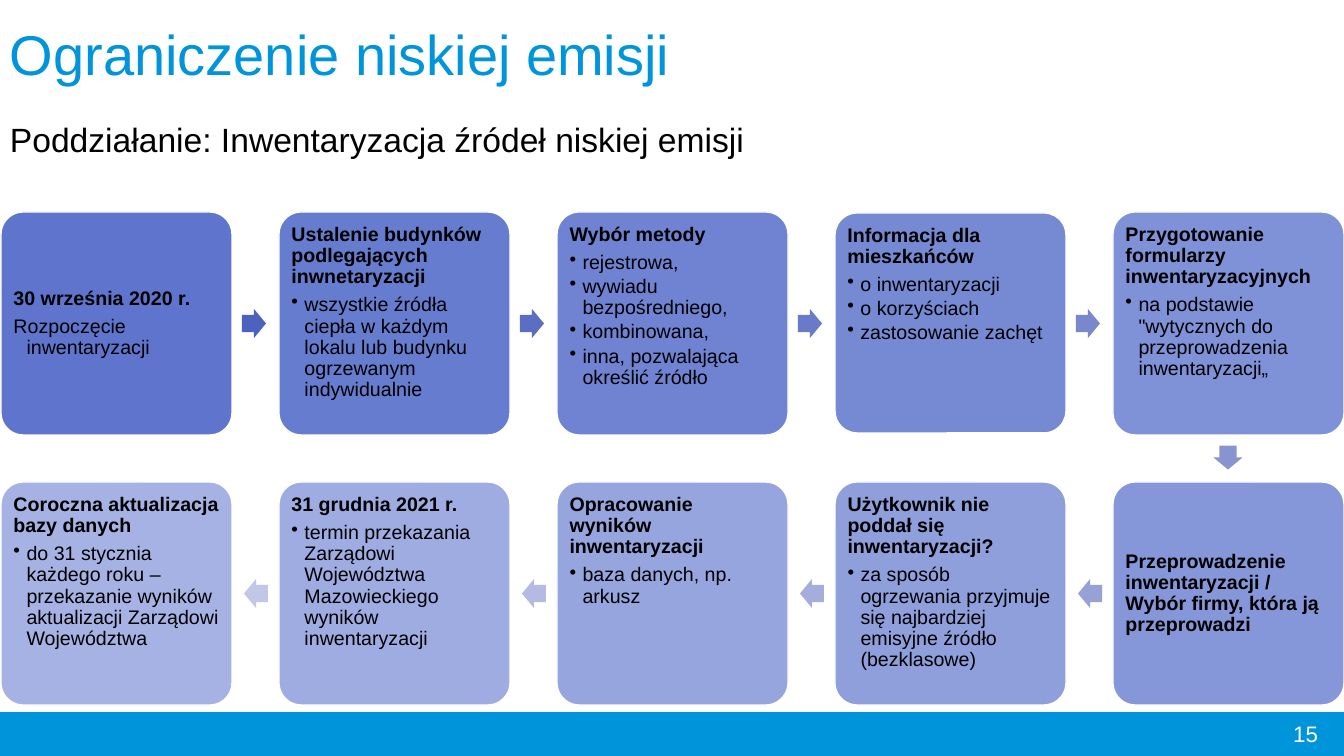
from lxml import etree
from pptx import Presentation, util as u
from pptx.dml.color import RGBColor
from pptx.enum import shapes, text
from pptx.oxml.ns import qn

PX = 914400 / 100.8
COLORS = {"brand": "0094DA", "step": "4E67C8", "white": "FFFFFF", "black": "000000"}
ARROW_COLORS = ["4B62BF", "5A6FC3", "697BC8", "7987CC", "8894D1",
                "96A1D6", "A5ADDB", "B4BAE1", "C2C7E6"]

# Each step: heading, detail lines
STEPS = [
    ("30 września 2020 r.", ["Rozpoczęcie inwentaryzacji"]),
    ("Ustalenie budynków podlegających inwnetaryzacji",
     ["wszystkie źródła ciepła w każdym lokalu lub budynku ogrzewanym indywidualnie"]),
    ("Wybór metody", ["rejestrowa,", "wywiadu bezpośredniego,", "kombinowana,",
                      "inna, pozwalająca określić źródło"]),
    ("Informacja dla mieszkańców",
     ["o inwentaryzacji", "o korzyściach", "zastosowanie zachęt"]),
    ("Przygotowanie formularzy inwentaryzacyjnych",
     ['na podstawie "wytycznych do przeprowadzenia inwentaryzacji„']),
    ("Przeprowadzenie inwentaryzacji /\nWybór firmy, która ją przeprowadzi", []),
    ("Użytkownik nie poddał się inwentaryzacji?",
     ["za sposób ogrzewania przyjmuje się najbardziej emisyjne źródło (bezklasowe)"]),
    ("Opracowanie wyników inwentaryzacji", ["baza danych, np. arkusz"]),
    ("31 grudnia 2021 r.",
     ["termin przekazania Zarządowi Województwa Mazowieckiego wyników inwentaryzacji"]),
    ("Coroczna aktualizacja bazy danych",
     ["do 31 stycznia każdego roku – przekazanie wyników aktualizacji Zarządowi Województwa"]),
]
CENTERED_STEPS = {0, 5}
SHORT_STEP = 3

COLUMNS = 5
LEFT, COLUMN_PITCH, BOX_WIDTH = 1, 278, 231
TOP, ROW_PITCH, BOX_HEIGHT = 212, 270, 223
ARROW_WIDTH, ARROW_HEIGHT = 24, 29


def px(length):
    return u.Emu(round(length * PX))


class SlideBuilder:
    font = "Arial"

    def __init__(self, presentation):
        self.slide = presentation.slides.add_slide(presentation.slide_layouts[6])

    def shape(self, kind, left, top, width, height, fill, line=None, opacity=100):
        shape = self.slide.shapes.add_shape(
            kind, px(left), px(top), px(width), px(height))
        shape.shadow.inherit = False
        shape.fill.solid()
        shape.fill.fore_color.rgb = RGBColor.from_string(fill)
        if opacity < 100:
            color = shape.fill._xPr.find(qn("a:solidFill"))[0]
            etree.SubElement(color, qn("a:alpha")).set("val", str(opacity * 1000))
        if line:
            shape.line.color.rgb = RGBColor.from_string(line)
            shape.line.width = u.Pt(1)
        else:
            shape.line.fill.background()
        return shape

    def frame(self, shape, inset, anchor):
        frame = shape.text_frame
        frame.word_wrap = True
        frame.vertical_anchor = anchor
        frame.margin_left = frame.margin_right = px(inset)
        frame.margin_top = frame.margin_bottom = px(inset)
        return frame

    def text_box(self, left, top, width, height, inset):
        box = self.slide.shapes.add_textbox(px(left), px(top), px(width), px(height))
        return self.frame(box, inset, text.MSO_ANCHOR.MIDDLE)

    def paragraph(self, frame, content, size, color, bold=False, indent=0,
                  bullet=False, before=0, after=0, spacing=0.9,
                  align=text.PP_ALIGN.LEFT):
        first = frame.paragraphs[0]
        paragraph = frame.add_paragraph() if first.runs else first
        properties = paragraph._p.get_or_add_pPr()
        if indent:
            properties.set("marL", str(px(indent)))
            properties.set("indent", str(-px(indent)))
        if bullet:
            etree.SubElement(properties, qn("a:buChar")).set("char", "•")
        paragraph.alignment = align
        paragraph.line_spacing = spacing
        paragraph.space_before = u.Pt(before)
        paragraph.space_after = u.Pt(after)
        for number, line in enumerate(content.split("\n")):
            if number:
                paragraph.add_line_break()
            run = paragraph.add_run()
            run.text = line
            run.font.name = self.font
            run.font.size = u.Pt(size)
            run.font.bold = bold
            run.font.color.rgb = RGBColor.from_string(color)

    def step(self, left, top, height, opacity, heading, details, centered):
        box = self.shape(shapes.MSO_SHAPE.ROUNDED_RECTANGLE, left, top, BOX_WIDTH,
                         height, COLORS["step"], COLORS["white"], opacity)
        box.adjustments[0] = 0.1
        anchor = text.MSO_ANCHOR.MIDDLE if centered else text.MSO_ANCHOR.TOP
        frame = self.frame(box, 6, anchor)
        self.paragraph(frame, heading, 14, COLORS["black"], bold=True, after=4.9)
        for detail in details:
            self.paragraph(frame, detail, 14, COLORS["black"], indent=13,
                           bullet=not centered, after=2.1)

    def arrow(self, left, top, color, rotation):
        arrow = self.shape(shapes.MSO_SHAPE.RIGHT_ARROW, left, top,
                           ARROW_WIDTH, ARROW_HEIGHT, color)
        arrow.adjustments[0] = 0.6
        arrow.adjustments[1] = 0.5
        arrow.rotation = rotation


def main():
    presentation = Presentation()
    presentation.slide_width = px(1344)
    presentation.slide_height = px(756)
    builder = SlideBuilder(presentation)

    # Footer bar and page number
    builder.shape(shapes.MSO_SHAPE.RECTANGLE, 0, 713, 1344, 43,
                  COLORS["brand"], COLORS["brand"])
    page_number = builder.text_box(1026, 713, 302, 41, 10)
    builder.paragraph(page_number, "15", 16, COLORS["white"], spacing=1.0,
                      align=text.PP_ALIGN.RIGHT)

    # Title and subtitle
    title = builder.text_box(0, 20, 1045, 147, 10)
    builder.paragraph(title, "Ograniczenie niskiej emisji", 40, COLORS["brand"])
    builder.paragraph(title, "Poddziałanie: Inwentaryzacja źródeł niskiej emisji",
                      24, COLORS["black"], before=25)

    # Steps run right along the first row, then back left along the second
    last = len(STEPS) - 1
    for index, (heading, details) in enumerate(STEPS):
        row = index // COLUMNS
        column = last - index if row else index
        left = LEFT + column * COLUMN_PITCH
        top = TOP + row * ROW_PITCH
        trim = 3 if index == SHORT_STEP else 0
        opacity = round(90 - 40 * index / last)
        builder.step(left, top + trim // 2, BOX_HEIGHT - trim, opacity,
                     heading, details, index in CENTERED_STEPS)

        # Arrow to the next step
        if index == last:
            continue
        middle = top + (BOX_HEIGHT - ARROW_HEIGHT) // 2
        if index == COLUMNS - 1:
            place = (left + (BOX_WIDTH - ARROW_WIDTH) // 2, 443)
            rotation = 90
        elif row:
            place, rotation = (left - COLUMN_PITCH + 243, middle), 180
        else:
            place, rotation = (left + 241, middle), 0
        builder.arrow(*place, ARROW_COLORS[index], rotation)

    presentation.save("out.pptx")


if __name__ == "__main__":
    main()
